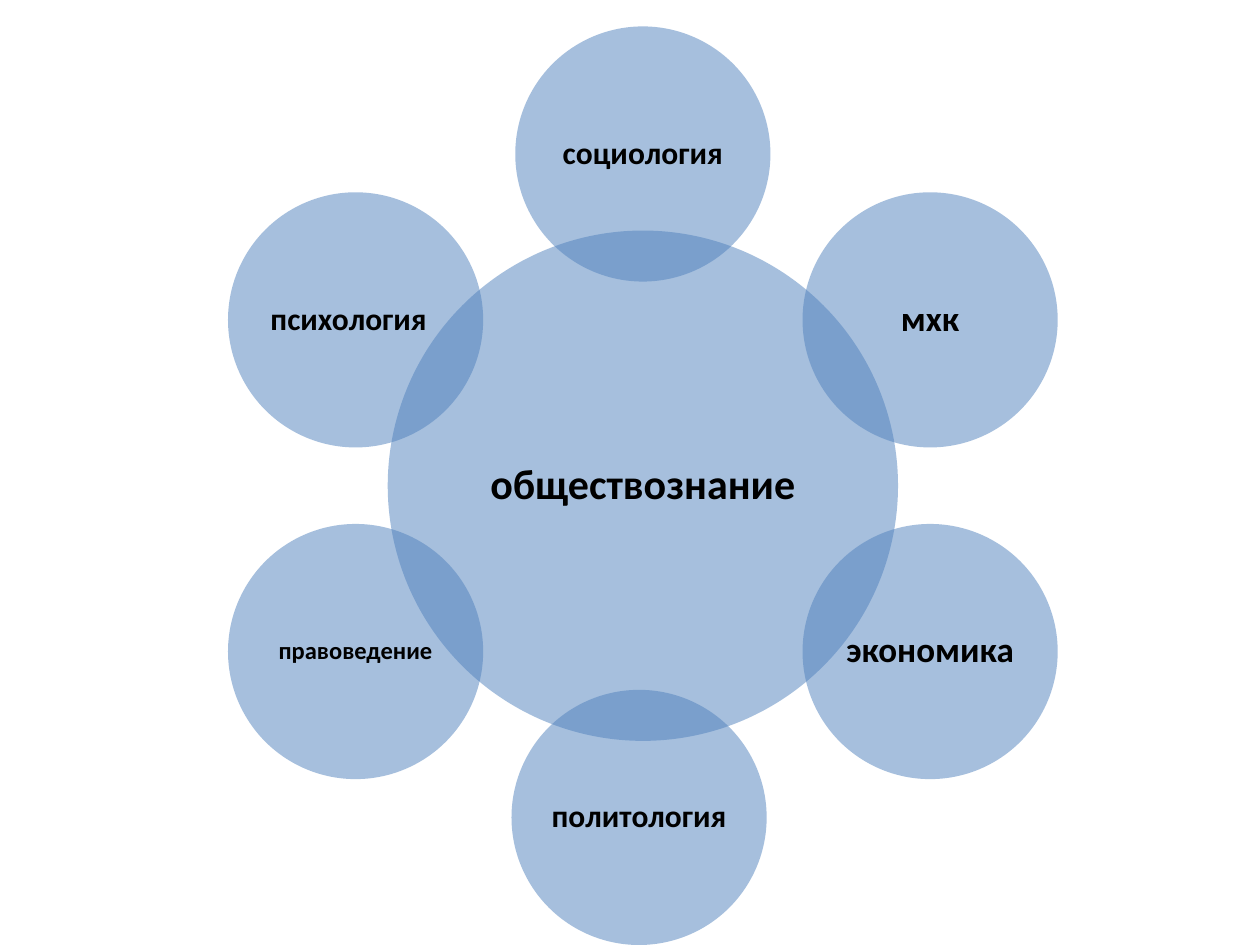
from math import cos, radians, sin

from lxml import etree
from pptx import Presentation
from pptx.dml.color import RGBColor
from pptx.enum.shapes import MSO_SHAPE
from pptx.enum.text import MSO_ANCHOR, PP_ALIGN
from pptx.oxml.ns import qn
from pptx.util import Inches, Pt

OVAL = MSO_SHAPE.OVAL
MIDDLE = MSO_ANCHOR.MIDDLE
CENTER = PP_ALIGN.CENTER
BLANK_LAYOUT = 6

HUB = ("обществознание", 24)
SUBJECTS = [
    ("социология", 18, 0, 0.03),
    ("мхк", 20, 0, 0.03),
    ("экономика", 20, 0, 0.03),
    ("политология", 18, -0.03, 0.03),
    ("правоведение", 14, 0, 0.03),
    ("психология", 18, 0, 0.14),
]


def set_fill(shape, color, opacity):
    """Fill a shape with a hex colour at an opacity in percent."""
    shape.fill.solid()
    shape.fill.fore_color.rgb = RGBColor.from_string(color)
    clr = shape._element.spPr.find(qn("a:solidFill"))[0]
    etree.SubElement(clr, qn("a:alpha"), val=str(opacity * 1000))


def add_circle(slide, cx, cy, diameter, text, size, right_inset=0.03):
    """Add a translucent labelled circle centred on a point."""
    s = slide.shapes.add_shape(
        OVAL, Inches(cx - diameter / 2), Inches(cy - diameter / 2),
        Inches(diameter), Inches(diameter))
    s.shadow.inherit = False
    s.line.fill.background()
    set_fill(s, "4F81BD", 50)
    tf = s.text_frame
    tf.word_wrap = False
    tf.vertical_anchor = MIDDLE
    tf.margin_left = tf.margin_top = tf.margin_bottom = Inches(0.03)
    tf.margin_right = Inches(right_inset)
    p = tf.paragraphs[0]
    p.text = text
    p.alignment = CENTER
    p.line_spacing = 0.9
    p.font.name = "Calibri"
    p.font.size = Pt(size)
    p.font.bold = True
    p.font.color.rgb = RGBColor.from_string("000000")


def add_radial_venn(slide, left, top, height):
    """Place the hub and its ring of subjects in a box of the given height."""
    hub_diameter = height / 1.8
    diameter = hub_diameter / 2
    orbit = (height - diameter) / 2
    cx = left + orbit * cos(radians(30)) + diameter / 2
    cy = top + height / 2
    add_circle(slide, cx, cy, hub_diameter, *HUB)
    for i, (text, size, shift, inset) in enumerate(SUBJECTS):
        angle = radians(360 / len(SUBJECTS) * i - 90)
        add_circle(slide, cx + orbit * cos(angle) + shift,
                   cy + orbit * sin(angle), diameter, text, size, inset)


def main():
    """Build the slide and save it."""
    prs = Presentation()
    prs.slide_width, prs.slide_height = Inches(10), Inches(7.5)
    slide = prs.slides.add_slide(prs.slide_layouts[BLANK_LAYOUT])
    add_radial_venn(slide, 1.81, 0.21, 7.29)
    prs.save("out.pptx")


if __name__ == "__main__":
    main()
